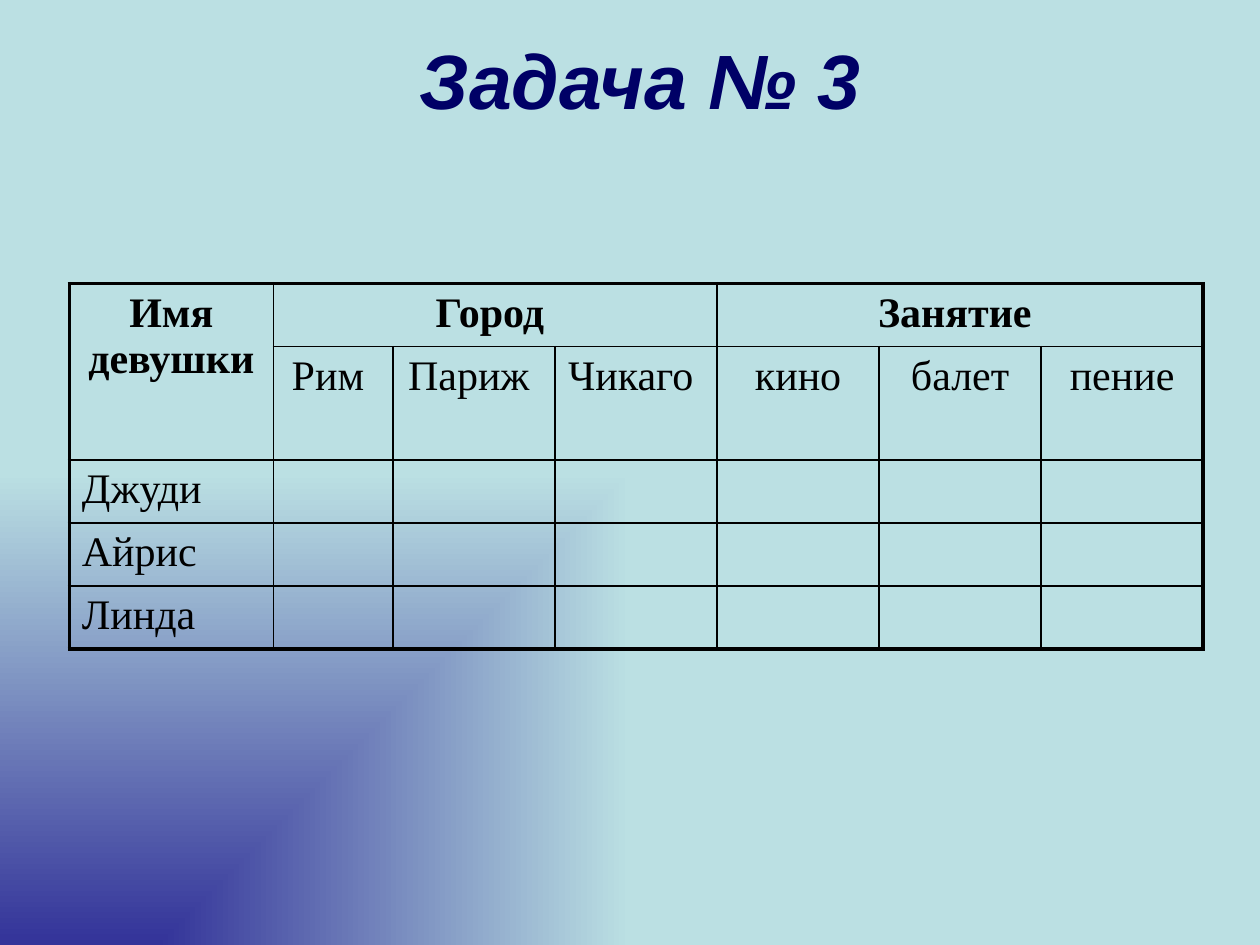
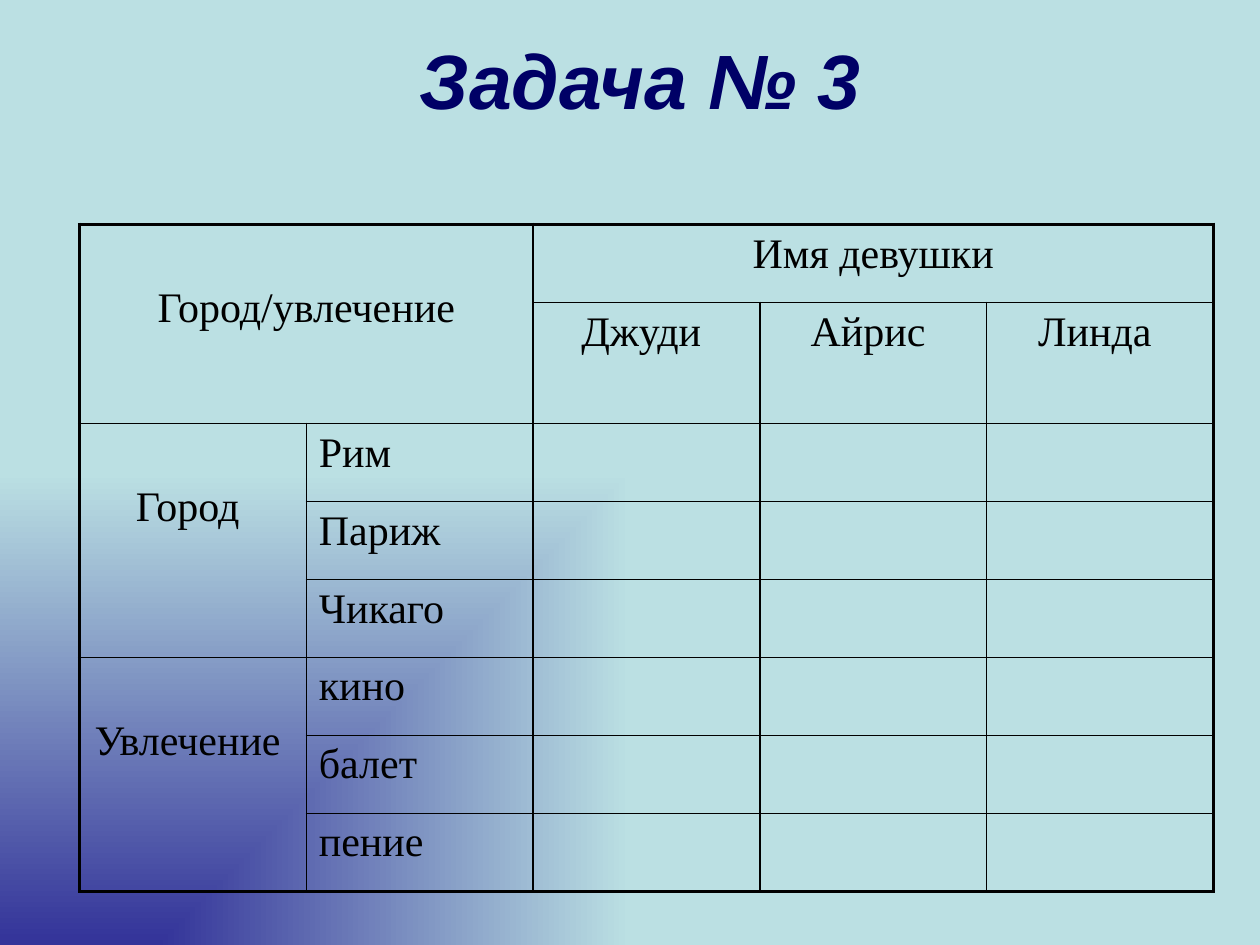
from lxml.etree import SubElement
from pptx import Presentation
from pptx.dml.color import RGBColor
from pptx.enum.text import MSO_ANCHOR, PP_ALIGN
from pptx.oxml.ns import qn
from pptx.util import Pt

HUES = {"title": "000066", "ink": "000000", "deep": "333399", "pale": "BBE0E3"}
TITLE = "Задача № 3"
GIRLS = ["Джуди", "Айрис", "Линда"]


def style(para, face, size, hue, bold=False, italic=False):
    font = para.font
    font.name, font.size, font.bold, font.italic = face, Pt(size), bold, italic
    font.color.rgb = RGBColor.from_string(HUES[hue])


def edge(cell, side, outer):
    props = cell._tc.get_or_add_tcPr()
    line = SubElement(props, qn(f"a:ln{side}"), w=str(Pt(2.25 if outer else 1)))
    fill = SubElement(line, qn("a:solidFill"))
    SubElement(fill, qn("a:srgbClr"), val=HUES["ink"])


deck = Presentation()
deck.slide_width, deck.slide_height = Pt(720), Pt(540)

back = deck.slide_master.background.fill
back.gradient()
for stop, hue, place in zip(back.gradient_stops, ("deep", "pale"), (0, 1)):
    stop.color.rgb = RGBColor.from_string(HUES[hue])
    stop.position = place
grad = deck.slide_master.element.find(".//" + qn("a:gradFill"))
grad.remove(grad.find(qn("a:lin")))
path = SubElement(grad, qn("a:path"), path="rect")
SubElement(path, qn("a:fillToRect"), t="100000", r="100000")

pages = [
    {
        "at": (39.6, 162),
        "cols": [116.6, 68.4] + [92.6] * 5,
        "rows": [36, 64.6, 36, 36, 36],
        "spans": [(0, 0, 1, 0), (0, 1, 0, 3), (0, 4, 0, 6)],
        "text": [
            ["Имя девушки", "Город ", "", "", "Занятие "],
            ["", "Рим ", "Париж ", "Чикаго ", "кино", "балет", "пение"],
        ] + [[girl] for girl in GIRLS],
        "bold": True,
        "drop": 3.6,
        "mid": False,
    },
    {
        "at": (45.4, 128.2),
        "cols": [129.6] * 5,
        "rows": [44.57, 69.14] + [44.57] * 6,
        "spans": [(0, 0, 1, 1), (0, 2, 0, 4), (2, 0, 4, 0), (5, 0, 7, 0)],
        "text": [
            ["Город/увлечение", "", "Имя девушки"],
            ["", ""] + [girl + " " for girl in GIRLS],
            ["Город ", "Рим"], ["", "Париж"], ["", "Чикаго"],
            ["Увлечение ", "кино"], ["", "балет"], ["", "пение"],
        ],
        "bold": False,
        "drop": 34.6,
        "mid": True,
    },
]

for page in pages:
    slide = deck.slides.add_slide(deck.slide_layouts[6])
    frame = slide.shapes.add_textbox(Pt(60), 0, Pt(612), Pt(90)).text_frame
    frame.word_wrap = True
    frame.vertical_anchor = MSO_ANCHOR.MIDDLE
    para = frame.paragraphs[0]
    para.text = TITLE
    para.alignment = PP_ALIGN.CENTER
    style(para, "Arial", 44, "title", True, True)

    cols, rows = page["cols"], page["rows"]
    left, top = page["at"]
    grid = slide.shapes.add_table(
        len(rows), len(cols), Pt(left), Pt(top), Pt(sum(cols)), Pt(sum(rows))
    ).table
    grid.first_row = grid.horz_banding = False
    for col, width in zip(grid.columns, cols):
        col.width = Pt(width)
    for row, height in zip(grid.rows, rows):
        row.height = Pt(height)
    for r1, c1, r2, c2 in page["spans"]:
        grid.cell(r1, c1).merge(grid.cell(r2, c2))

    for r in range(len(rows)):
        for c in range(len(cols)):
            cell = grid.cell(r, c)
            high = cell.span_height if cell.is_merge_origin else 1
            wide = cell.span_width if cell.is_merge_origin else 1
            edge(cell, "L", c == 0)
            edge(cell, "R", c + wide == len(cols))
            edge(cell, "T", r == 0)
            edge(cell, "B", r + high == len(rows))
            cell.fill.background()
            if high > 1:
                cell.margin_top = Pt(page["drop"])
            words = page["text"][r]
            if c < len(words) and words[c]:
                para = cell.text_frame.paragraphs[0]
                para.text = words[c]
                if r < 2 or (page["mid"] and c == 0):
                    para.alignment = PP_ALIGN.CENTER
                style(para, "Times New Roman", 24, "ink", page["bold"] and r == 0)

deck.save("out.pptx")
